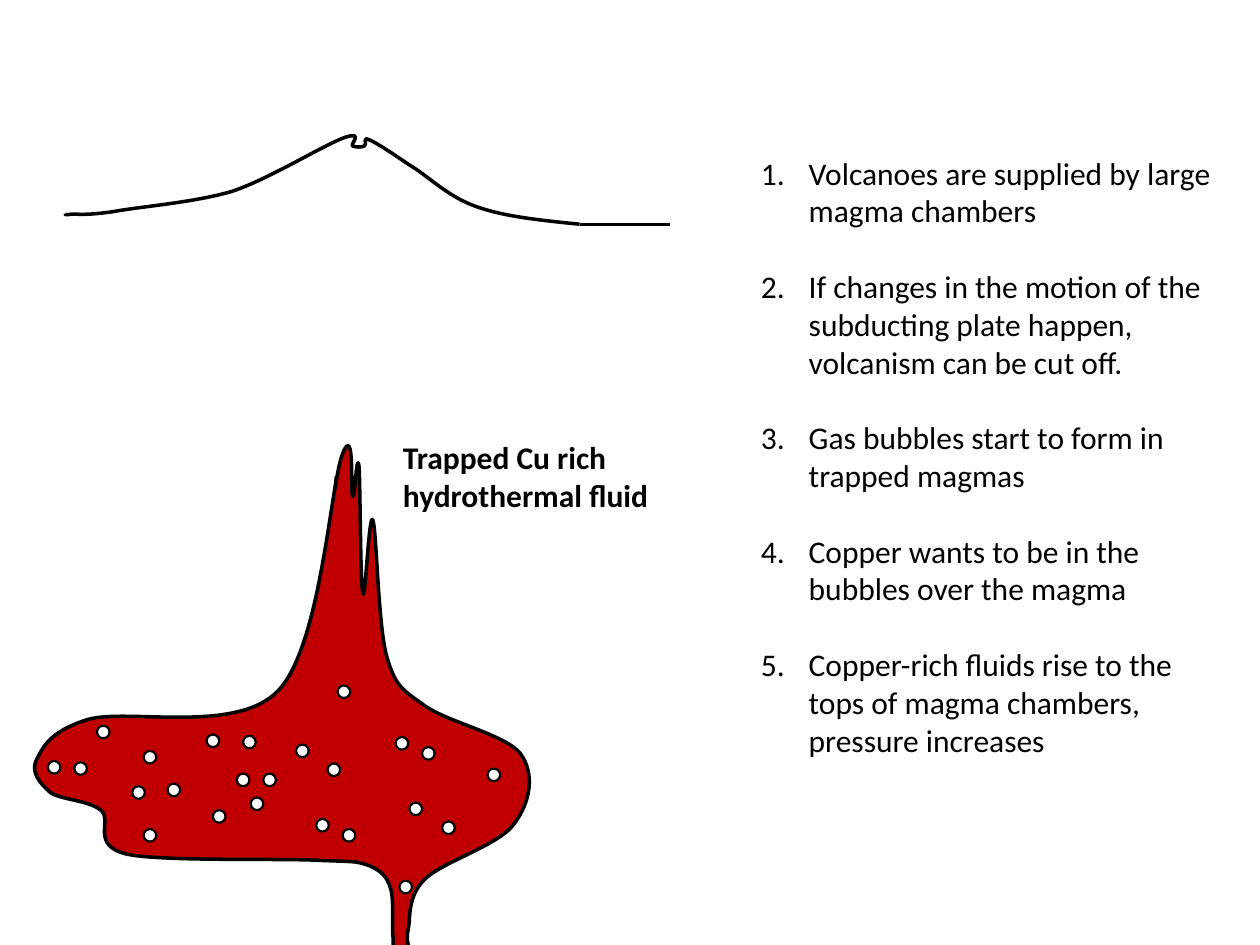
from dataclasses import dataclass
from lxml.etree import SubElement
from pptx import Presentation
from pptx.dml.color import RGBColor
from pptx.enum.shapes import MSO_CONNECTOR, MSO_SHAPE
from pptx.enum.text import MSO_AUTO_SIZE, PP_ALIGN
from pptx.oxml.ns import qn
from pptx.util import Pt

PX = 9144  # EMU per px, 100 px to the inch
SLIDE_SIZE = (1000, 750)


@dataclass(frozen=True)
class Theme:
    ink: RGBColor = RGBColor(0, 0, 0)
    magma: RGBColor = RGBColor(0xC0, 0, 0)
    bubble: RGBColor = RGBColor(255, 255, 255)
    font: str = "Calibri"
    text_size: Pt = Pt(18)
    step_gap: Pt = Pt(21.6)
    outline: Pt = Pt(2)
    bubble_outline: Pt = Pt(1.25)


THEME = Theme()

# Content: text
STEPS = [
    "Volcanoes are supplied by large magma chambers",
    "If changes in the motion of the subducting plate happen, volcanism can be cut off.",
    "Gas bubbles start to form in trapped magmas",
    "Copper wants to be in the bubbles over the magma",
    "Copper-rich fluids rise to the tops of magma chambers, pressure increases",
]
STEPS_BOX = (594, 117, 378, 495)
STEP_INDENT = 38
FLUID_LABEL = "Trapped Cu rich hydrothermal fluid"
FLUID_BOX = (310, 343, 244, 71)

# Content: outlines as a box, a start point, then (control, control, end) per curve
VOLCANO_BOX = (51, 108, 409, 70)
VOLCANO_START = (52, 170)
VOLCANO_CURVES = [
    ((51, 170), (51, 171), (57, 170)),
    ((63, 170), (69, 171), (90, 168)),
    ((111, 164), (153, 161), (184, 152)),
    ((214, 142), (257, 115), (274, 109)),
    ((290, 104), (277, 115), (280, 116)),
    ((283, 117), (287, 117), (289, 116)),
    ((292, 115), (287, 108), (293, 111)),
    ((299, 113), (325, 131), (325, 131)),
    ((339, 139), (355, 156), (378, 164)),
    ((400, 172), (430, 175), (460, 178)),
]
PLAIN_LINE = ((460, 178), (532, 178))

CHAMBER_BOX = (28, 354, 393, 400)
CHAMBER_START = (256, 683)
CHAMBER_CURVES = [
    ((224, 681), (130, 684), (101, 678)),
    ((71, 671), (90, 651), (80, 643)),
    ((70, 635), (49, 635), (40, 629)),
    ((32, 622), (24, 613), (29, 603)),
    ((34, 594), (38, 581), (70, 571)),
    ((102, 562), (188, 583), (221, 548)),
    ((255, 512), (262, 386), (272, 360)),
    ((282, 335), (278, 392), (280, 394)),
    ((282, 395), (283, 357), (285, 370)),
    ((286, 383), (286, 464), (288, 471)),
    ((290, 479), (293, 404), (296, 413)),
    ((299, 421), (300, 496), (307, 521)),
    ((314, 545), (319, 547), (337, 560)),
    ((355, 573), (401, 583), (413, 598)),
    ((425, 614), (421, 637), (408, 654)),
    ((396, 671), (351, 684), (337, 698)),
    ((323, 712), (326, 729), (324, 738)),
    ((322, 747), (325, 750), (324, 752)),
    ((324, 755), (321, 752), (321, 752)),
    ((319, 752), (317, 752), (316, 752)),
    ((315, 752), (312, 753), (312, 752)),
    ((311, 752), (312, 751), (312, 751)),
    ((312, 749), (312, 752), (312, 744)),
    ((311, 737), (313, 714), (310, 705)),
    ((307, 695), (302, 691), (293, 687)),
    ((283, 684), (288, 684), (256, 683)),
]
CHAMBER_TIP_LINE = ((267, 378), (266, 388))

BUBBLE_SIZE = 10
BUBBLES = [
    (114, 596), (169, 643), (387, 610), (209, 614), (114, 658), (59, 605),
    (268, 544), (335, 593), (351, 652), (260, 606), (272, 658), (193, 584),
    (133, 622), (77, 576), (199, 633), (38, 604), (105, 624), (188, 614),
    (317, 699), (251, 650), (235, 591), (325, 637), (314, 585), (164, 583),
]


def emu(lengths):
    return [length * PX for length in lengths]


def style_shape(shape, fill, width):
    shape.shadow.inherit = False
    if fill is None:
        shape.fill.background()
    else:
        shape.fill.solid()
        shape.fill.fore_color.rgb = fill
    shape.line.color.rgb = THEME.ink
    shape.line.width = width


def add_outline(shapes, box, start, curves, fill=None):
    """Freeform spanning the box, its path made of cubic curves."""
    left, top, width, height = box
    builder = shapes.build_freeform(left, top, scale=PX)
    builder.add_line_segments([(left + width, top + height)], close=False)
    shape = builder.convert_to_shape()
    outline = shape._element.spPr.find(".//" + qn("a:path"))
    for segment in list(outline):
        outline.remove(segment)
    segments = [("a:moveTo", [start])] + [("a:cubicBezTo", curve) for curve in curves]
    for tag, points in segments:
        segment = SubElement(outline, qn(tag))
        for x, y in points:
            SubElement(segment, qn("a:pt"), x=str(x - left), y=str(y - top))
    if fill is not None:
        SubElement(outline, qn("a:close"))
    style_shape(shape, fill, THEME.outline)


def add_line(shapes, ends):
    begin, end = ends
    line = shapes.add_connector(MSO_CONNECTOR.STRAIGHT, *emu(begin + end))
    line.line.color.rgb = THEME.ink
    line.line.width = THEME.outline
    SubElement(line._element.spPr, qn("a:effectLst"))


def add_text(shapes, box, texts, bold=False):
    frame = shapes.add_textbox(*emu(box)).text_frame
    frame.word_wrap = True
    frame.auto_size = MSO_AUTO_SIZE.SHAPE_TO_FIT_TEXT
    frame.text = "\n".join(texts)
    for paragraph in frame.paragraphs:
        paragraph.alignment = PP_ALIGN.LEFT
        paragraph.font.name = THEME.font
        paragraph.font.size = THEME.text_size
        paragraph.font.bold = bold
        paragraph.font.color.rgb = THEME.ink
    return frame.paragraphs


def number_paragraph(paragraph):
    properties = paragraph._p.get_or_add_pPr()
    indent = STEP_INDENT * PX
    properties.set("marL", str(indent))
    properties.set("indent", str(-indent))
    numbering = properties.makeelement(qn("a:buAutoNum"), {"type": "arabicPeriod"})
    properties.find(qn("a:defRPr")).addprevious(numbering)


def main():
    presentation = Presentation()
    presentation.slide_width, presentation.slide_height = emu(SLIDE_SIZE)
    shapes = presentation.slides.add_slide(presentation.slide_layouts[6]).shapes

    # Volcano and the plain beside it
    volcano = shapes.add_group_shape().shapes
    add_outline(volcano, VOLCANO_BOX, VOLCANO_START, VOLCANO_CURVES)
    add_line(volcano, PLAIN_LINE)

    # Magma chamber with gas bubbles
    add_outline(shapes, CHAMBER_BOX, CHAMBER_START, CHAMBER_CURVES, THEME.magma)
    for corner in BUBBLES:
        bubble = shapes.add_shape(
            MSO_SHAPE.OVAL, *emu(corner + (BUBBLE_SIZE, BUBBLE_SIZE)))
        style_shape(bubble, THEME.bubble, THEME.bubble_outline)
    add_line(shapes, CHAMBER_TIP_LINE)

    # Numbered steps and label
    steps = add_text(shapes, STEPS_BOX, STEPS)
    for paragraph in steps:
        number_paragraph(paragraph)
    for paragraph in steps[:-1]:
        paragraph.space_after = THEME.step_gap
    add_text(shapes, FLUID_BOX, [FLUID_LABEL], bold=True)

    presentation.save("out.pptx")


if __name__ == "__main__":
    main()
